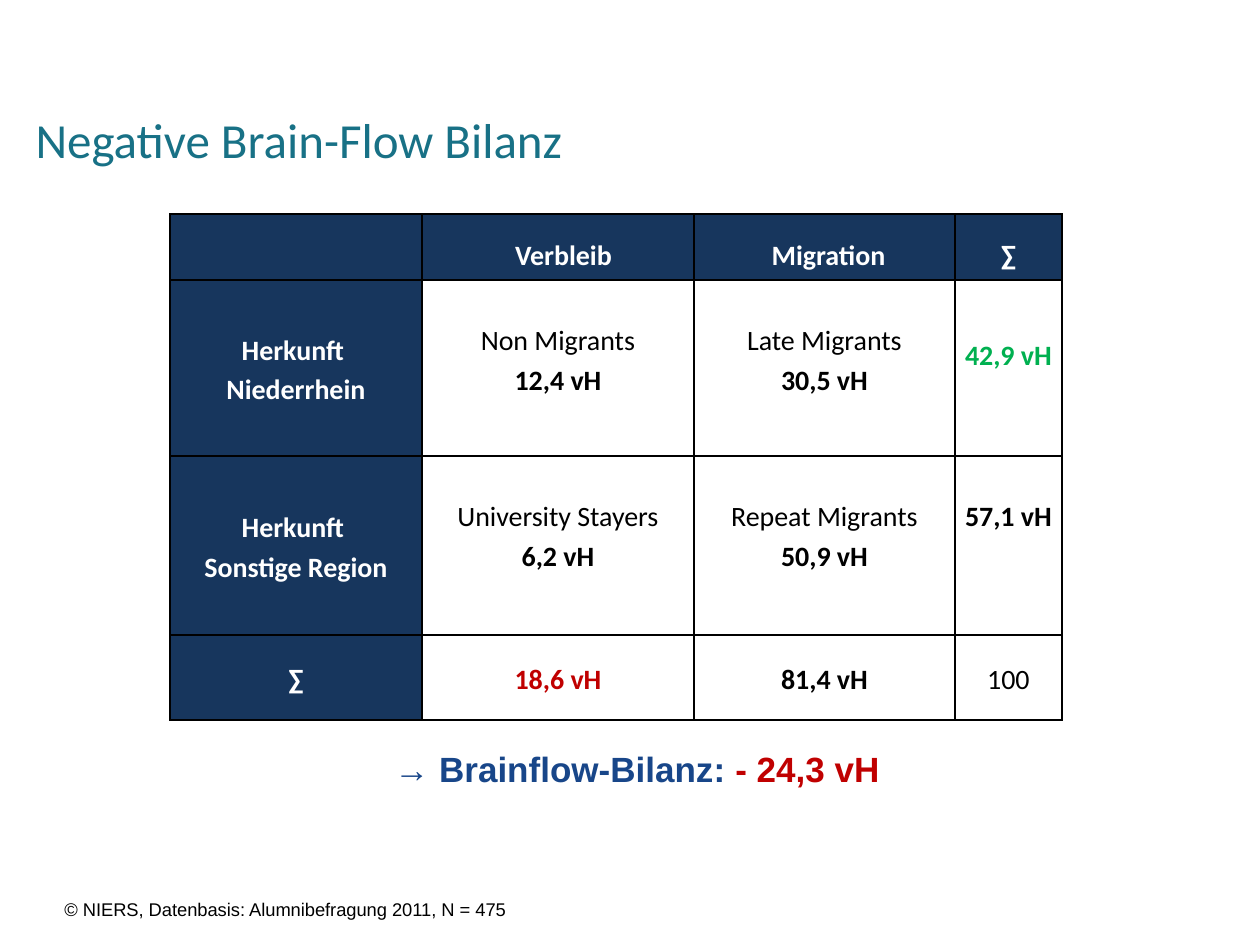
import pptx
import pptx.util
import pptx.dml.color
import pptx.enum.text
import pptx.oxml

SCALE = 914400 / 126
NAVY, WHITE, BLACK, RED = "17365D", "FFFFFF", "000000", "C00000"
ALIGN = pptx.enum.text.PP_ALIGN
ANCHOR = pptx.enum.text.MSO_ANCHOR
NS = "http://schemas.openxmlformats.org/drawingml/2006/main"


def emu(px):
    return pptx.util.Emu(round(px * SCALE))


def color(code):
    return pptx.dml.color.RGBColor.from_string(code)


def write(para, text, size=16, font="Calibri", ink=BLACK, bold=False,
          align=ALIGN.LEFT, space=None):
    """Add one run to a paragraph and format both."""
    run = para.add_run()
    run.text = text
    run.font.size = pptx.util.Pt(size)
    run.font.name = font
    run.font.bold = bold
    run.font.color.rgb = color(ink)
    para.alignment = align
    if space:
        para.line_spacing = space


class Deck:
    def __init__(self):
        self.show = pptx.Presentation()
        self.show.slide_width = emu(1260)
        self.show.slide_height = emu(945)
        self.page = self.show.slides.add_slide(self.show.slide_layouts[5])

    def title(self, box, text, **style):
        shape = self.page.shapes.title
        shape.left, shape.top, shape.width, shape.height = map(emu, box)
        shape.text_frame.vertical_anchor = ANCHOR.MIDDLE
        write(shape.text_frame.paragraphs[0], text, **style)

    def label(self, box, runs, **style):
        frame = self.page.shapes.add_textbox(*map(emu, box)).text_frame
        frame.word_wrap = True
        for text, ink in runs:
            write(frame.paragraphs[0], text, ink=ink, font="Arial", **style)

    def border(self, cell):
        props = cell._tc.get_or_add_tcPr()
        for side in "LRTB":
            props.append(pptx.oxml.parse_xml(
                f'<a:ln{side} xmlns:a="{NS}" w="12700"><a:solidFill>'
                f'<a:srgbClr val="{BLACK}"/></a:solidFill></a:ln{side}>'))

    def cell(self, cell, lines, fill=WHITE, top=None, left=5, space=1.15):
        """Lines are (text, ink, bold); a top inset replaces centring."""
        self.border(cell)
        cell.fill.solid()
        cell.fill.fore_color.rgb = color(fill)
        cell.margin_left, cell.margin_right = emu(left), emu(5)
        cell.margin_top, cell.margin_bottom = emu(top or 0), emu(0)
        cell.vertical_anchor = ANCHOR.TOP if top else ANCHOR.MIDDLE
        frame = cell.text_frame
        for i, (text, ink, bold) in enumerate(lines):
            para = frame.add_paragraph() if i else frame.paragraphs[0]
            write(para, text, ink=ink, bold=bold, align=ALIGN.CENTER,
                  space=space)

    def table(self, left, top, cols, rows):
        grid = self.page.shapes.add_table(
            len(rows), len(cols), emu(left), emu(top),
            emu(sum(cols)), emu(sum(rows))).table
        grid.first_row = grid.horz_banding = False
        for col, width in zip(grid.columns, cols):
            col.width = emu(width)
        for row, height in zip(grid.rows, rows):
            row.height = emu(height)
        return grid


def main():
    deck = Deck()
    deck.title((23, 102, 1155, 73), "Negative Brain-Flow Bilanz",
               size=28, ink="187186")

    grid = deck.table(170, 214, (252, 272, 261, 107), (66, 176, 179, 85))

    # Header row
    heads = (("", 5), ("Verbleib", 16), ("Migration", 13), ("∑", 5))
    for c, (text, left) in enumerate(heads):
        lines = [(text, WHITE, True)] if text else []
        deck.cell(grid.cell(0, c), lines, NAVY, left=left, space=1.5)

    # Header column
    sides = (("Herkunft ", "Niederrhein"), ("Herkunft ", "Sonstige Region"),
             ("∑",))
    for r, texts in enumerate(sides, 1):
        deck.cell(grid.cell(r, 0), [(t, WHITE, True) for t in texts], NAVY)

    # Origin groups: name over share
    groups = ((("Non Migrants", "12,4 vH"), ("Late Migrants", "30,5 vH")),
              (("University Stayers", "6,2 vH"),
               ("Repeat Migrants", "50,9 vH")))
    for r, row in enumerate(groups, 1):
        for c, (name, share) in enumerate(row, 1):
            deck.cell(grid.cell(r, c),
                      [(name, BLACK, False), (share, BLACK, True)], top=39)

    # Sums
    sums = ((1, 3, "42,9 vH", "00B050", True, 54),
            (2, 3, "57,1 vH", BLACK, True, 39),
            (3, 1, "18,6 vH", RED, True, None),
            (3, 2, "81,4 vH", BLACK, True, None),
            (3, 3, "100", BLACK, False, None))
    for r, c, text, ink, bold, top in sums:
        deck.cell(grid.cell(r, c), [(text, ink, bold)], top=top)

    # Result and source
    deck.label((382, 741, 694, 55),
               [("→ Brainflow-Bilanz: ", "184689"), ("- 24,3 vH", RED)],
               size=20, bold=True)
    deck.label((52, 892, 824, 57),
               [("© NIERS, Datenbasis: Alumnibefragung 2011, N = 475", BLACK)],
               size=10.5)
    deck.show.save("out.pptx")


if __name__ == "__main__":
    main()
